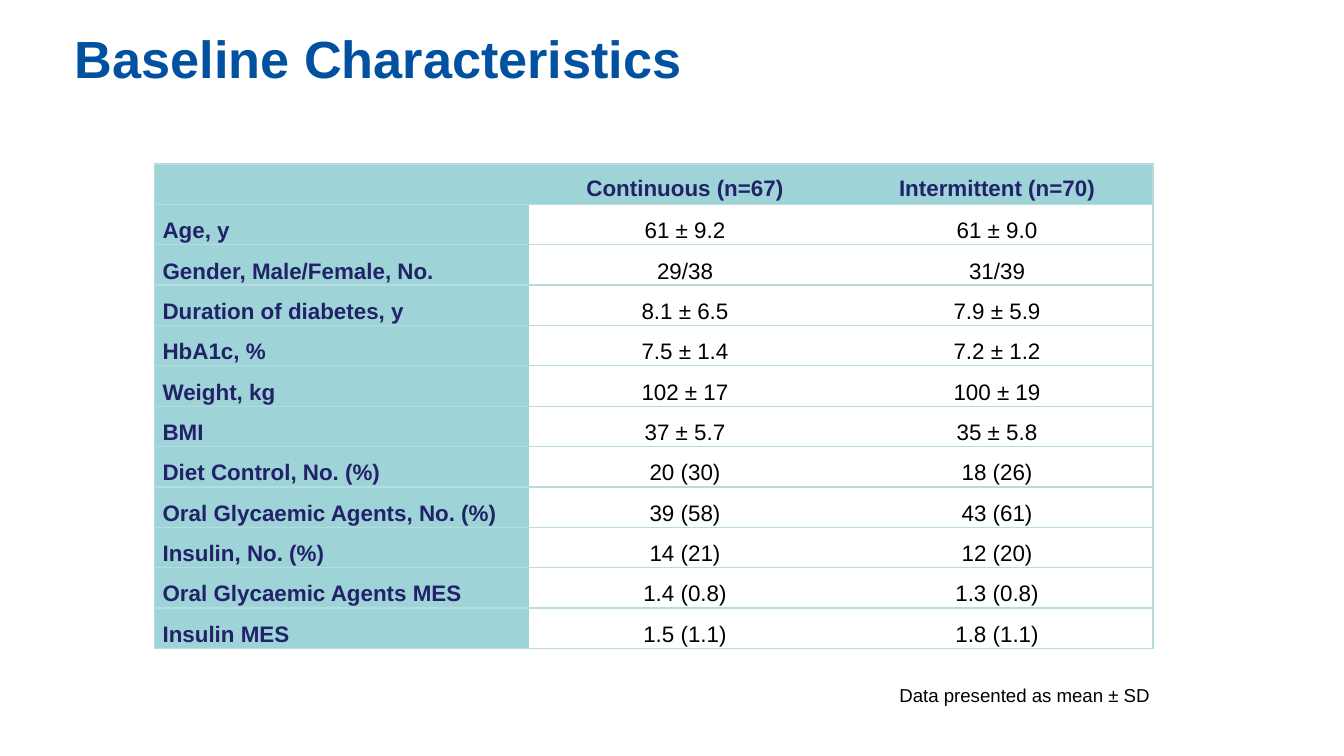
"""Build a slide with a table of baseline characteristics for two trial groups."""
from dataclasses import dataclass
from typing import NamedTuple

from lxml import etree
from pptx import Presentation
from pptx import util as u
from pptx.dml.color import RGBColor
from pptx.enum import text
from pptx.oxml.ns import qn


@dataclass(frozen=True)
class Theme:
    font: str = "Arial"
    title: str = "0051A0"
    label: str = "222268"
    body: str = "000000"
    band: str = "9ED3D7"
    rule: str = "B6DCDF"
    title_pt: int = 28
    table_pt: int = 12
    note_pt: int = 10
    rule_pt: float = 0.75


class Box(NamedTuple):
    left: float
    top: float
    width: float
    height: float

    def emu(self) -> list[int]:
        return [u.Inches(v) for v in self]


class Row(NamedTuple):
    label: str
    continuous: str
    intermittent: str


THEME = Theme()
ALIGN = text.PP_ALIGN
TITLE_BOX = Box(0.46, 0.2, 9.07, 0.71)
TABLE_BOX = Box(1.15, 1.22, 7.43, 3.44)
NOTE_BOX = Box(3.65, 5.04, 5, 0.27)
COLUMN_SHARES = (0.375, 0.3125, 0.3125)
ROWS = [
    Row("", "Continuous (n=67)", "Intermittent (n=70)"),
    Row("Age, y", "61 ± 9.2", "61 ± 9.0"),
    Row("Gender, Male/Female, No.", "29/38", "31/39"),
    Row("Duration of diabetes, y", "8.1 ± 6.5", "7.9 ± 5.9"),
    Row("HbA1c, %", "7.5 ± 1.4", "7.2 ± 1.2"),
    Row("Weight, kg", "102 ± 17", "100 ± 19"),
    Row("BMI", "37 ± 5.7", "35 ± 5.8"),
    Row("Diet Control, No. (%)", "20 (30)", "18 (26)"),
    Row("Oral Glycaemic Agents, No. (%)", "39 (58)", "43 (61)"),
    Row("Insulin, No. (%)", "14 (21)", "12 (20)"),
    Row("Oral Glycaemic Agents MES", "1.4 (0.8)", "1.3 (0.8)"),
    Row("Insulin MES", "1.5 (1.1)", "1.8 (1.1)"),
]


def style(p, size: float, color: str, bold: bool, align) -> None:
    p.alignment = align
    p.font.name = THEME.font
    p.font.size = u.Pt(size)
    p.font.bold = bold
    p.font.color.rgb = RGBColor.from_string(color)


def add_text(slide, box: Box, words: str, size: float, color: str,
             bold: bool = False, align=ALIGN.LEFT, spacing: float = 1.0) -> None:
    tf = slide.shapes.add_textbox(*box.emu()).text_frame
    tf.word_wrap = True
    p = tf.paragraphs[0]
    p.text = words
    p.line_spacing = spacing
    style(p, size, color, bold, align)


def set_borders(cell, drawn: dict[str, bool]) -> None:
    tc_pr = cell._tc.get_or_add_tcPr()
    for i, (side, shown) in enumerate(drawn.items()):
        ln = etree.Element(qn(f"a:ln{side}"), w=str(u.Pt(THEME.rule_pt)))
        if shown:
            fill = etree.SubElement(ln, qn("a:solidFill"))
            etree.SubElement(fill, qn("a:srgbClr"), val=THEME.rule)
        else:
            etree.SubElement(ln, qn("a:noFill"))
        tc_pr.insert(i, ln)


def fill_cell(cell, words: str, is_header: bool, is_first: bool, is_last: bool) -> None:
    banded = is_header or is_first
    cell.margin_left = cell.margin_right = u.Inches(0.06)
    cell.margin_top = cell.margin_bottom = 0
    cell.vertical_anchor = text.MSO_ANCHOR.TOP if is_header else text.MSO_ANCHOR.MIDDLE
    if banded:
        cell.fill.solid()
        cell.fill.fore_color.rgb = RGBColor.from_string(THEME.band)
    else:
        cell.fill.background()
    set_borders(cell, {"L": is_first, "R": is_last, "T": True, "B": True})
    if words:
        p = cell.text_frame.paragraphs[0]
        p.text = words
        p.line_spacing = 1.5
        style(p, THEME.table_pt, THEME.label if banded else THEME.body, banded,
              ALIGN.LEFT if is_first else ALIGN.CENTER)


def add_characteristics(slide, box: Box, rows: list[Row]) -> None:
    table = slide.shapes.add_table(len(rows), len(COLUMN_SHARES), *box.emu()).table
    table.first_row = table.horz_banding = False
    for column, share in zip(table.columns, COLUMN_SHARES):
        column.width = u.Inches(box.width * share)
    for r, row in enumerate(rows):
        table.rows[r].height = u.Inches(box.height / len(rows))
        for c, words in enumerate(row):
            fill_cell(table.cell(r, c), words, r == 0, c == 0, c == len(row) - 1)


def main() -> None:
    prs = Presentation()
    prs.slide_width = u.Inches(10)
    prs.slide_height = prs.slide_width * 9 // 16
    s = prs.slides.add_slide(prs.slide_layouts[6])
    add_text(s, TITLE_BOX, "Baseline Characteristics", THEME.title_pt, THEME.title,
             bold=True, spacing=0.9)
    add_characteristics(s, TABLE_BOX, ROWS)
    add_text(s, NOTE_BOX, "Data presented as mean ± SD", THEME.note_pt, THEME.body,
             align=ALIGN.RIGHT)
    prs.save("out.pptx")


if __name__ == "__main__":
    main()
